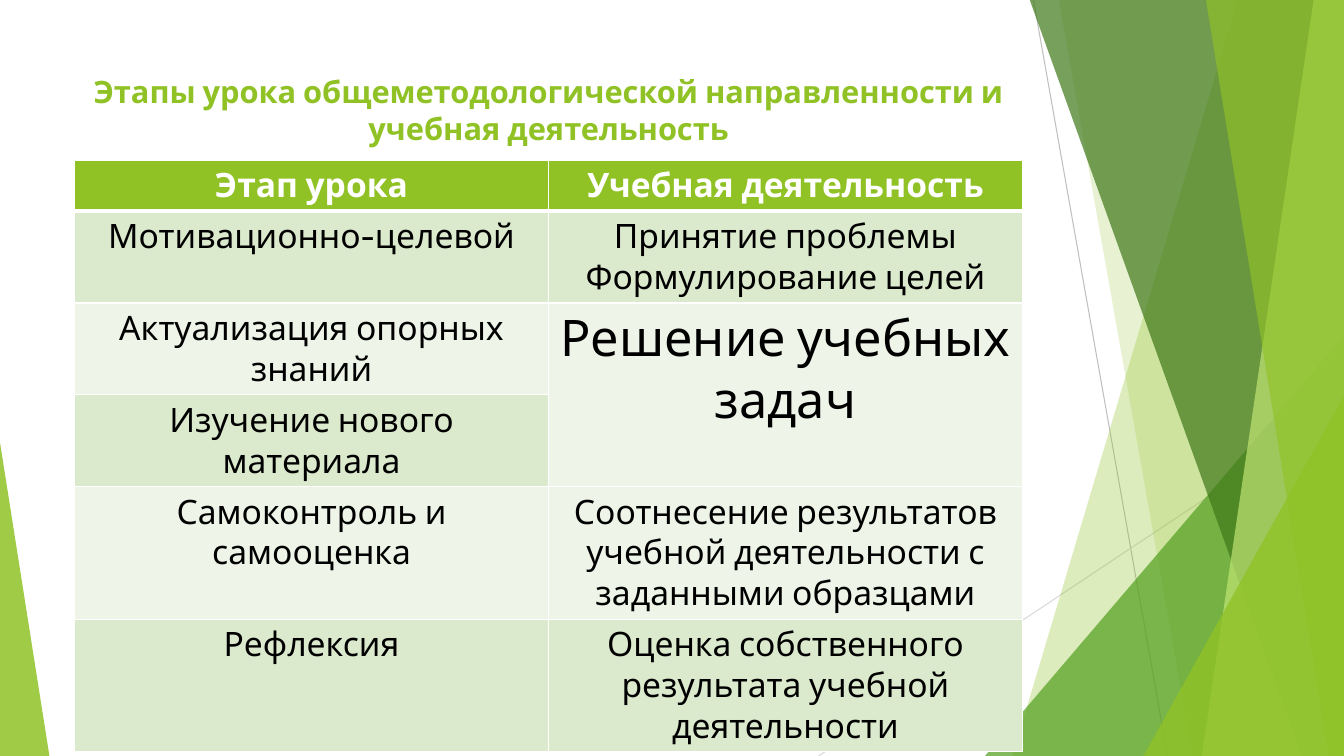
"""Build a slide with a table of lesson stages and learning activities."""
import pptx
import pptx.util
import pptx.dml.color
import pptx.enum.shapes
import pptx.enum.text
import pptx.oxml
import pptx.oxml.ns
from pptx.util import Inches

TITLE = "Этапы урока общеметодологической направленности и учебная деятельность"
ROWS = [
    ("Этап урока", "Учебная деятельность"),
    ("Мотивационно-целевой", "Принятие проблемы\nФормулирование целей"),
    ("Актуализация опорных знаний", "Решение учебных задач"),
    ("Изучение нового материала", ""),
    ("Самоконтроль и самооценка",
     "Соотнесение результатов учебной деятельности с заданными образцами"),
    ("Рефлексия", "Оценка собственного результата учебной деятельности"),
]
ROW_LINES = [1, 2, 2, 2, 3, 3]
MERGED_ROWS = (2, 3)

FONT = "Cabin"
COLORS = {
    "lime": "90C226", "green": "54A021", "dark": "3F7819", "pale": "C0E474",
    "band": "DBE9CD", "light": "EEF4E8", "white": "FFFFFF", "black": "000000",
    "gray": "BFBFBF", "silver": "D9D9D9",
}

WIDTH, HEIGHT = 13.33, 7.5
TOP = -0.01
LEFT, BLOCK_WIDTH = 0.74, 9.4
TITLE_TOP, TITLE_HEIGHT = 0.67, 0.84
TABLE_TOP = 1.59
LINE_HEIGHT, CELL_PADDING = 0.405, 0.1

RAYS = [
    ((10.25, 0), (11.58, HEIGHT), "gray"),
    ((WIDTH, 4.03), (8.12, HEIGHT), "silver"),
]
FACETS = [
    ("band", (12.28, 10.04), "lime", 30),
    ("band", (10.5, 11.83), "lime", 20),
    ("triangle", (9.77, 3.33, 3.56, 1), "green", 72),
    ("band", (10.21, 12.91), "dark", 70),
    ("band", (13.03, 11.92), "pale", 70),
    ("band", (11.96, 13.18), "lime", 65),
    ("triangle", (11.34, 3.93, 1.99, 1), "lime", 80),
    ("triangle", (0, 4.39, 0.49, 0), "lime", 85),
]


def rgb(name):
    return pptx.dml.color.RGBColor.from_string(COLORS[name])


def write(tf, text, size=24, color="black", bold=False):
    for i, line in enumerate(text.split("\n")):
        p = tf.paragraphs[0] if i == 0 else tf.add_paragraph()
        p.alignment = pptx.enum.text.PP_ALIGN.CENTER
        r = p.add_run()
        r.text = line
        r.font.name = FONT
        r.font.size = pptx.util.Pt(size)
        r.font.bold = bold
        r.font.color.rgb = rgb(color)


def add_ray(s, start, end, color):
    line = s.shapes.add_connector(
        pptx.enum.shapes.MSO_CONNECTOR.STRAIGHT,
        *(Inches(v) for v in start + end))
    line.line.color.rgb = rgb(color)
    line.line.width = pptx.util.Pt(0.75)
    line._element.spPr.append(pptx.oxml.parse_xml(
        f'<a:effectLst {pptx.oxml.ns.nsdecls("a")}/>'))


def add_facet(s, kind, geometry, color, opacity):
    if kind == "band":
        top_x, bottom_x = geometry
        points = [(top_x, TOP), (WIDTH, TOP), (WIDTH, HEIGHT), (bottom_x, HEIGHT)]
        points = [(Inches(x), Inches(y)) for x, y in points]
        builder = s.shapes.build_freeform(*points[0])
        builder.add_line_segments(points[1:], close=True)
        sp = builder.convert_to_shape()
    else:
        left, top, width, apex = geometry
        sp = s.shapes.add_shape(
            pptx.enum.shapes.MSO_SHAPE.ISOSCELES_TRIANGLE,
            Inches(left), Inches(top), Inches(width), Inches(HEIGHT - top))
        sp.adjustments[0] = apex
    sp.shadow.inherit = False
    sp.line.fill.background()
    sp.fill.solid()
    sp.fill.fore_color.rgb = rgb(color)
    clr = sp._element.spPr.find(".//" + pptx.oxml.ns.qn("a:srgbClr"))
    clr.append(pptx.oxml.parse_xml(
        f'<a:alpha {pptx.oxml.ns.nsdecls("a")} val="{opacity * 1000}"/>'))


def set_borders(cell, top, bottom):
    tcPr = cell._tc.get_or_add_tcPr()
    for i, (side, pt) in enumerate(zip("LRTB", (1, 1, top, bottom))):
        tcPr.insert(i, pptx.oxml.parse_xml(
            f'<a:ln{side} {pptx.oxml.ns.nsdecls("a")} w="{pt * 12700}"><a:solidFill>'
            f'<a:srgbClr val="{COLORS["white"]}"/></a:solidFill></a:ln{side}>'))


def add_stage_table(s):
    heights = [n * LINE_HEIGHT + CELL_PADDING for n in ROW_LINES]
    table = s.shapes.add_table(
        len(ROWS), 2, Inches(LEFT), Inches(TABLE_TOP),
        Inches(BLOCK_WIDTH), Inches(sum(heights))).table
    first, last = MERGED_ROWS
    table.cell(first, 1).merge(table.cell(last, 1))
    for i, texts in enumerate(ROWS):
        table.rows[i].height = Inches(heights[i])
        header = i == 0
        fill = "lime" if header else "band" if i % 2 else "light"
        for j, text in enumerate(texts):
            cell = table.cell(i, j)
            cell.fill.solid()
            cell.fill.fore_color.rgb = rgb(fill)
            set_borders(cell, top=3 if i == 1 else 1, bottom=3 if header else 1)
            if text:
                write(cell.text_frame, text,
                      size=36 if (i, j) == (first, 1) else 24,
                      color="white" if header else "black", bold=header)


def main():
    prs = pptx.Presentation()
    prs.slide_width, prs.slide_height = Inches(WIDTH), Inches(HEIGHT)
    s = prs.slides.add_slide(prs.slide_layouts.get_by_name("Title Only"))
    for ray in RAYS:
        add_ray(s, *ray)
    for facet in FACETS:
        add_facet(s, *facet)
    title = s.shapes.title
    title.left, title.top = Inches(LEFT), Inches(TITLE_TOP)
    title.width, title.height = Inches(BLOCK_WIDTH), Inches(TITLE_HEIGHT)
    title.text_frame.vertical_anchor = pptx.enum.text.MSO_ANCHOR.MIDDLE
    write(title.text_frame, TITLE, size=22, color="lime", bold=True)
    s.shapes._spTree.append(title._element)
    add_stage_table(s)
    prs.save("out.pptx")


if __name__ == "__main__":
    main()
